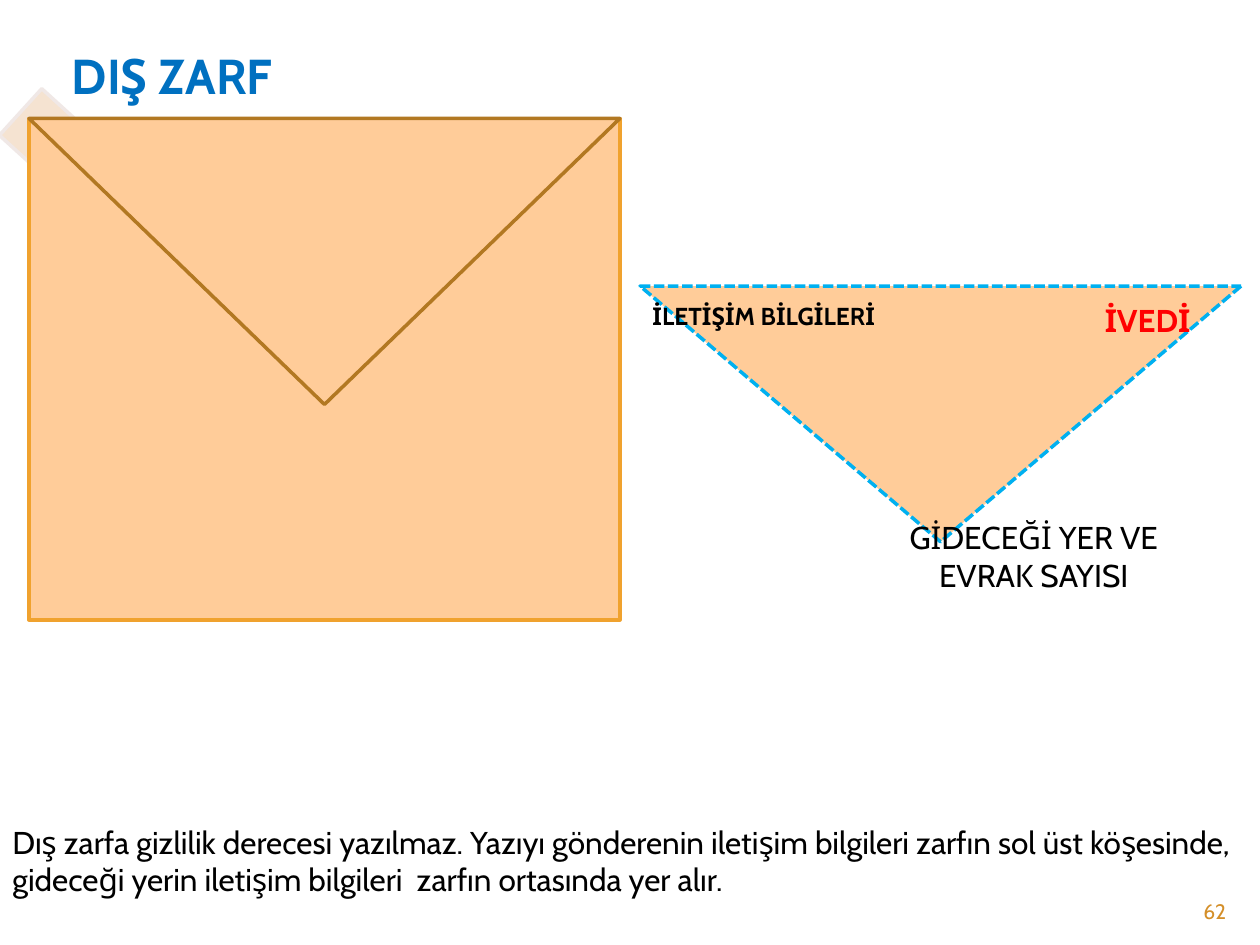
from dataclasses import dataclass
from typing import Optional

from pptx import Presentation
from pptx.dml.color import RGBColor
from pptx.enum.dml import MSO_LINE
from pptx.enum.shapes import MSO_SHAPE
from pptx.enum.text import MSO_ANCHOR, PP_ALIGN
from pptx.util import Pt

RECTANGLE = MSO_SHAPE.RECTANGLE
TRIANGLE = MSO_SHAPE.ISOSCELES_TRIANGLE
DASHED = MSO_LINE.SQUARE_DOT
LEFT, CENTER, RIGHT = PP_ALIGN.LEFT, PP_ALIGN.CENTER, PP_ALIGN.RIGHT
TOP, MIDDLE = MSO_ANCHOR.TOP, MSO_ANCHOR.MIDDLE

FONT = "Cabin"
WHITE = RGBColor(0xFF, 0xFF, 0xFF)
BLACK = RGBColor(0x00, 0x00, 0x00)
RED = RGBColor(0xFF, 0x00, 0x00)
TITLE_BLUE = RGBColor(0x00, 0x70, 0xC0)
DASH_BLUE = RGBColor(0x00, 0xB0, 0xF0)
PAPER = RGBColor(0xFF, 0xCC, 0x99)
ENVELOPE_EDGE = RGBColor(0xF0, 0xA2, 0x2E)
FLAP_EDGE = RGBColor(0xB2, 0x78, 0x22)
STRIP_FILL = RGBColor(0xF5, 0xE3, 0xD1)
STRIP_EDGE = RGBColor(0xF0, 0xE8, 0xE6)
NUMBER_GOLD = RGBColor(0xD4, 0x8F, 0x29)


@dataclass(frozen=True)
class Box:
    left: float
    top: float
    width: float
    height: float

    def lengths(self) -> tuple:
        return Pt(self.left), Pt(self.top), Pt(self.width), Pt(self.height)


@dataclass(frozen=True)
class Outline:
    box: Box
    kind: MSO_SHAPE
    fill: RGBColor
    edge: RGBColor
    rotation: float = 0
    dash: Optional[MSO_LINE] = None


@dataclass(frozen=True)
class Label:
    box: Box
    lines: tuple[str, ...]
    size: float
    color: RGBColor = BLACK
    bold: bool = False
    align: PP_ALIGN = LEFT
    anchor: MSO_ANCHOR = TOP


ENVELOPE = Box(16.56, 67.68, 337.68, 286.56)
FLAP = Box(ENVELOPE.left, ENVELOPE.top, ENVELOPE.width, 163.44)
OPEN_FLAP = Box(365.76, 163.44, 343.44, 146.16)
LABEL_TOP = 168.48

OUTLINES = (
    Outline(Box(-19.44, 126.72, 239.76, 36), RECTANGLE, STRIP_FILL, STRIP_EDGE, 42.3),
    Outline(ENVELOPE, RECTANGLE, PAPER, ENVELOPE_EDGE),
    Outline(FLAP, TRIANGLE, PAPER, FLAP_EDGE, 180),
    Outline(OPEN_FLAP, TRIANGLE, PAPER, DASH_BLUE, 180, DASHED),
)

TITLE = Label(Box(33.84, 22.32, 348.48, 41.04), ("DIŞ ZARF",), 28, TITLE_BLUE, True,
              anchor=MIDDLE)

LABELS = (
    Label(Box(648, 509.76, 59.76, 19.44), ("62",), 12, NUMBER_GOLD, align=RIGHT),
    Label(Box(624.24, LABEL_TOP, 73.44, 28.8), ("İVEDİ",), 18, RED, True),
    Label(Box(OPEN_FLAP.left, LABEL_TOP, 151.92, 24.48), ("İLETİŞİM BİLGİLERİ",), 14,
          bold=True),
    Label(Box(478.08, 292.32, 225.36, 51.12), ("GİDECEĞİ YER VE", "EVRAK SAYISI"), 18,
          align=CENTER),
    Label(Box(0, 466.56, 720, 51.12),
          ("Dış zarfa gizlilik derecesi yazılmaz. Yazıyı gönderenin iletişim bilgileri "
           "zarfın sol üst köşesinde, gideceği yerin iletişim bilgileri  zarfın "
           "ortasında yer alır.",), 18),
)


def draw_outline(slide, outline: Outline) -> None:
    shape = slide.shapes.add_shape(outline.kind, *outline.box.lengths())
    shape.rotation = outline.rotation
    shape.shadow.inherit = False
    shape.fill.solid()
    shape.fill.fore_color.rgb = outline.fill
    shape.line.color.rgb = outline.edge
    shape.line.width = Pt(2)
    if outline.dash is not None:
        shape.line.dash_style = outline.dash


def write_label(shape, label: Label) -> None:
    frame = shape.text_frame
    frame.word_wrap = True
    frame.vertical_anchor = label.anchor
    font_format = {"name": FONT, "size": Pt(label.size), "bold": label.bold}
    for index, line in enumerate(label.lines):
        paragraph = frame.add_paragraph() if index else frame.paragraphs[0]
        paragraph.alignment = label.align
        run = paragraph.add_run()
        run.text = line
        for attribute, value in font_format.items():
            setattr(run.font, attribute, value)
        run.font.color.rgb = label.color


def place_title(slide, label: Label) -> None:
    title = slide.shapes.title
    title.left, title.top, title.width, title.height = label.box.lengths()
    write_label(title, label)


def main() -> None:
    presentation = Presentation()
    presentation.slide_width, presentation.slide_height = Pt(720), Pt(540)
    slide = presentation.slides.add_slide(presentation.slide_layouts.get_by_name("Title Only"))
    slide.background.fill.solid()
    slide.background.fill.fore_color.rgb = WHITE

    place_title(slide, TITLE)
    for outline in OUTLINES:
        draw_outline(slide, outline)
    for label in LABELS:
        write_label(slide.shapes.add_textbox(*label.box.lengths()), label)

    presentation.save("out.pptx")


if __name__ == "__main__":
    main()
